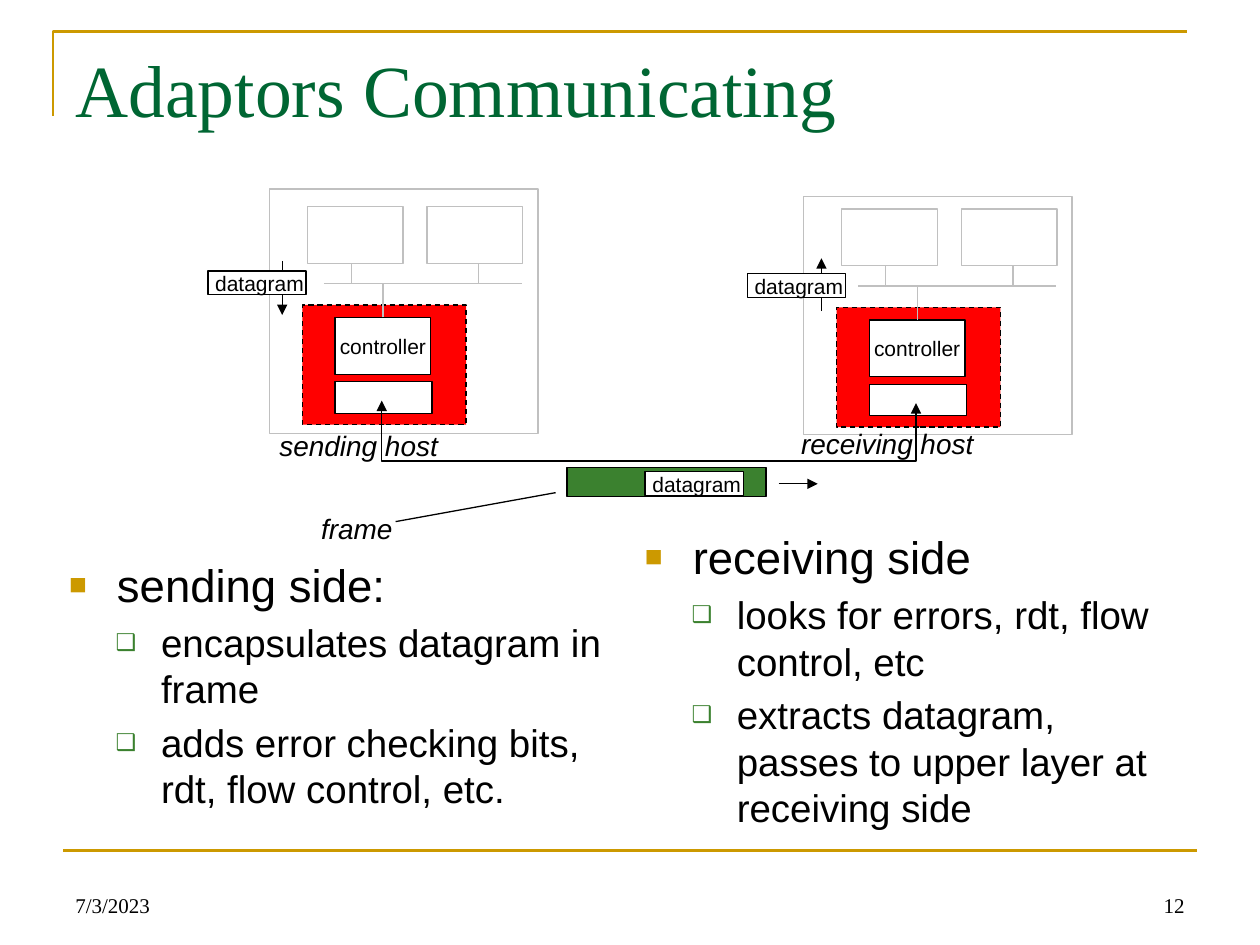
import pptx
import pptx.dml.color
import pptx.enum.dml
import pptx.enum.shapes
import pptx.enum.text
import pptx.oxml
import pptx.oxml.ns
import pptx.util
from pptx.dml.color import RGBColor
from pptx.util import Inches

GOLD = RGBColor(0xCC, 0x99, 0x00)
DARK_GREEN = RGBColor(0x00, 0x66, 0x33)
GREEN = RGBColor(0x3B, 0x81, 0x2F)
RED = RGBColor(0xFF, 0x00, 0x00)
GRAY = RGBColor(0xC0, 0xC0, 0xC0)
BLACK = RGBColor(0x00, 0x00, 0x00)
WHITE = RGBColor(0xFF, 0xFF, 0xFF)
SERIF = "Times New Roman"
SANS = "Arial"
ALIGN = pptx.enum.text.PP_ALIGN
ANCHOR = pptx.enum.text.MSO_ANCHOR
AUTO_SIZE = pptx.enum.text.MSO_AUTO_SIZE


def add_child(parent, tag, **attributes):
    child = pptx.oxml.parse_xml(f"<{tag} {pptx.oxml.ns.nsdecls('a')}/>")
    for name, value in attributes.items():
        child.set(name, str(value))
    parent.append(child)
    return child


def style_line(shape, color, width=0.75):
    shape.line.color.rgb = color
    shape.line.width = pptx.util.Pt(width)


def add_arrowheads(shape, *ends):
    outline = shape.element.spPr.find(pptx.oxml.ns.qn("a:ln"))
    for end in ends:
        add_child(outline, f"a:{end}", type="triangle")


def add_run(paragraph, text, size, font=SANS, color=BLACK, italic=False):
    run = paragraph.add_run()
    run.text = text
    run.font.size = pptx.util.Pt(size)
    run.font.name = font
    run.font.color.rgb = color
    run.font.italic = italic


def add_box(slide, left, top, width, height, fill=WHITE, line=BLACK):
    shape = slide.shapes.add_shape(
        pptx.enum.shapes.MSO_SHAPE.RECTANGLE,
        Inches(left), Inches(top), Inches(width), Inches(height))
    shape.shadow.inherit = False
    shape.fill.solid()
    shape.fill.fore_color.rgb = fill
    style_line(shape, line)
    return shape


def add_line(slide, start, end, color=BLACK, width=0.75, arrow=False, begin_shape=None):
    connector = slide.shapes.add_connector(
        pptx.enum.shapes.MSO_CONNECTOR.STRAIGHT,
        Inches(start[0]), Inches(start[1]), Inches(end[0]), Inches(end[1]))
    style_line(connector, color, width)
    if arrow:
        add_arrowheads(connector, "tailEnd")
    add_child(connector.element.spPr, "a:effectLst")
    if begin_shape is not None:
        connector.begin_connect(begin_shape, 0)


def add_path(slide, points, color, width=0.75):
    first, *rest = [(Inches(x), Inches(y)) for x, y in points]
    builder = slide.shapes.build_freeform(*first)
    builder.add_line_segments(rest, close=False)
    shape = builder.convert_to_shape()
    shape.shadow.inherit = False
    shape.fill.background()
    style_line(shape, color, width)
    return shape


def add_label(slide, text, left, top, width, height, size, italic=False):
    label = slide.shapes.add_textbox(
        Inches(left), Inches(top), Inches(width), Inches(height))
    label.text_frame.word_wrap = False
    label.text_frame.auto_size = AUTO_SIZE.SHAPE_TO_FIT_TEXT
    add_run(label.text_frame.paragraphs[0], text, size, italic=italic)


def add_datagram(slide, left, top):
    add_box(slide, left, top, 0.78, 0.19)
    add_label(slide, "datagram", left - 0.04, top - 0.05, 0.93, 0.3, 12)


def add_footer(slide, text, left, alignment):
    footer = slide.shapes.add_textbox(
        Inches(left), Inches(6.83), Inches(2.33), Inches(0.5))
    footer.text_frame.word_wrap = True
    footer.text_frame.vertical_anchor = ANCHOR.BOTTOM
    paragraph = footer.text_frame.paragraphs[0]
    paragraph.alignment = alignment
    add_run(paragraph, text, 12, SERIF)


def format_bullet(paragraph, margin, indent, character, color, percent):
    properties = paragraph._p.get_or_add_pPr()
    properties.set("marL", str(Inches(margin)))
    properties.set("indent", str(Inches(indent)))
    add_child(add_child(properties, "a:spcBef"), "a:spcPct", val=20000)
    add_child(add_child(properties, "a:buClr"), "a:srgbClr", val=color)
    add_child(properties, "a:buSzPct", val=percent * 1000)
    add_child(properties, "a:buFont", typeface=SANS)
    add_child(properties, "a:buChar", char=character)


def add_bullets(slide, left, top, width, height, heading, points):
    body = slide.shapes.add_textbox(
        Inches(left), Inches(top), Inches(width), Inches(height))
    body.text_frame.word_wrap = True
    paragraph = body.text_frame.paragraphs[0]
    format_bullet(paragraph, 0.38, -0.38, "■", GOLD, 65)
    add_run(paragraph, heading, 26)
    for point in points:
        paragraph = body.text_frame.add_paragraph()
        paragraph.level = 1
        format_bullet(paragraph, 0.73, -0.36, "❑", GREEN, 60)
        add_run(paragraph, point, 22)


def add_host(slide, left, top, height, parts_top):
    add_box(slide, left, top, 2.13, height, line=GRAY)
    adaptor = add_box(slide, left + 0.26, parts_top + 0.78, 1.3, 0.95, RED)
    adaptor.line.dash_style = pptx.enum.dml.MSO_LINE.DASH
    add_box(slide, left + 0.52, parts_top + 1.39, 0.77, 0.25)
    controller = add_box(slide, left + 0.52, parts_top + 0.88, 0.76, 0.45)
    controller.text_frame.word_wrap = False
    controller.text_frame.vertical_anchor = ANCHOR.MIDDLE
    paragraph = controller.text_frame.paragraphs[0]
    paragraph.alignment = ALIGN.CENTER
    add_run(paragraph, "controller", 12)
    bus = parts_top + 0.61
    add_line(slide, (left + 0.43, bus), (left + 2, bus), GRAY)
    stem = left + 0.9
    add_line(slide, (stem, parts_top + 0.88), (stem, bus), GRAY, begin_shape=controller)
    for box_offset, stub_offset in ((0.3, 0.65), (1.25, 1.66)):
        add_box(slide, left + box_offset, parts_top, 0.76, 0.45, line=GRAY)
        stub = left + stub_offset
        add_line(slide, (stub, bus), (stub, parts_top + 0.45), GRAY)


def add_title(slide):
    title = slide.shapes.title
    title.left, title.top = Inches(0.5), Inches(0.3)
    title.width, title.height = Inches(9), Inches(1.25)
    title.text_frame.auto_size = AUTO_SIZE.NONE
    title.text_frame.vertical_anchor = ANCHOR.TOP
    paragraph = title.text_frame.paragraphs[0]
    paragraph.alignment = ALIGN.LEFT
    add_run(paragraph, "Adaptors Communicating", 42, SERIF, DARK_GREEN)


def add_diagram(slide):
    add_box(slide, 4.5, 3.71, 1.58, 0.23, GREEN)
    add_host(slide, 2.14, 1.5, 1.94, 1.64)
    add_host(slide, 6.38, 1.56, 1.89, 1.66)
    add_label(slide, "sending host", 2.12, 3.35, 1.46, 0.37, 16, True)
    add_label(slide, "receiving host", 6.26, 3.34, 1.57, 0.37, 16, True)
    add_line(slide, (2.24, 2.07), (2.24, 2.5), arrow=True)
    add_datagram(slide, 1.65, 2.15)
    add_line(slide, (6.52, 2.47), (6.52, 2.05), arrow=True)
    add_datagram(slide, 5.93, 2.17)
    link = add_path(slide, [(3.03, 3.18), (3.03, 3.66), (7.27, 3.66), (7.27, 3.2)], BLACK)
    add_arrowheads(link, "headEnd", "tailEnd")
    add_datagram(slide, 5.12, 3.74)
    add_line(slide, (6.18, 3.84), (6.49, 3.84), arrow=True)
    add_label(slide, "frame", 2.45, 4.01, 0.77, 0.37, 16, True)
    add_line(slide, (3.14, 4.14), (4.41, 3.91))


def main():
    presentation = pptx.Presentation()
    presentation.slide_width = Inches(10)
    presentation.slide_height = Inches(7.5)
    slide = presentation.slides.add_slide(presentation.slide_layouts[5])
    add_path(slide, [(0.42, 0.92), (0.42, 0.25), (9.42, 0.25)], GOLD, 1.5)
    add_line(slide, (0.5, 6.75), (9.5, 6.75), GOLD, 1.5)
    add_footer(slide, "7/3/2023", 0.5, ALIGN.LEFT)
    add_footer(slide, "12", 7.17, ALIGN.RIGHT)
    add_title(slide)
    add_bullets(slide, 0.45, 4.37, 4.45, 2.12, "sending side:", [
        "encapsulates datagram in frame",
        "adds error checking bits, rdt, flow control, etc."])
    add_bullets(slide, 5.02, 4.15, 4.47, 2.02, "receiving side", [
        "looks for errors, rdt, flow control, etc",
        "extracts datagram, passes to upper layer at receiving side"])
    add_diagram(slide)
    presentation.save("out.pptx")


if __name__ == "__main__":
    main()
